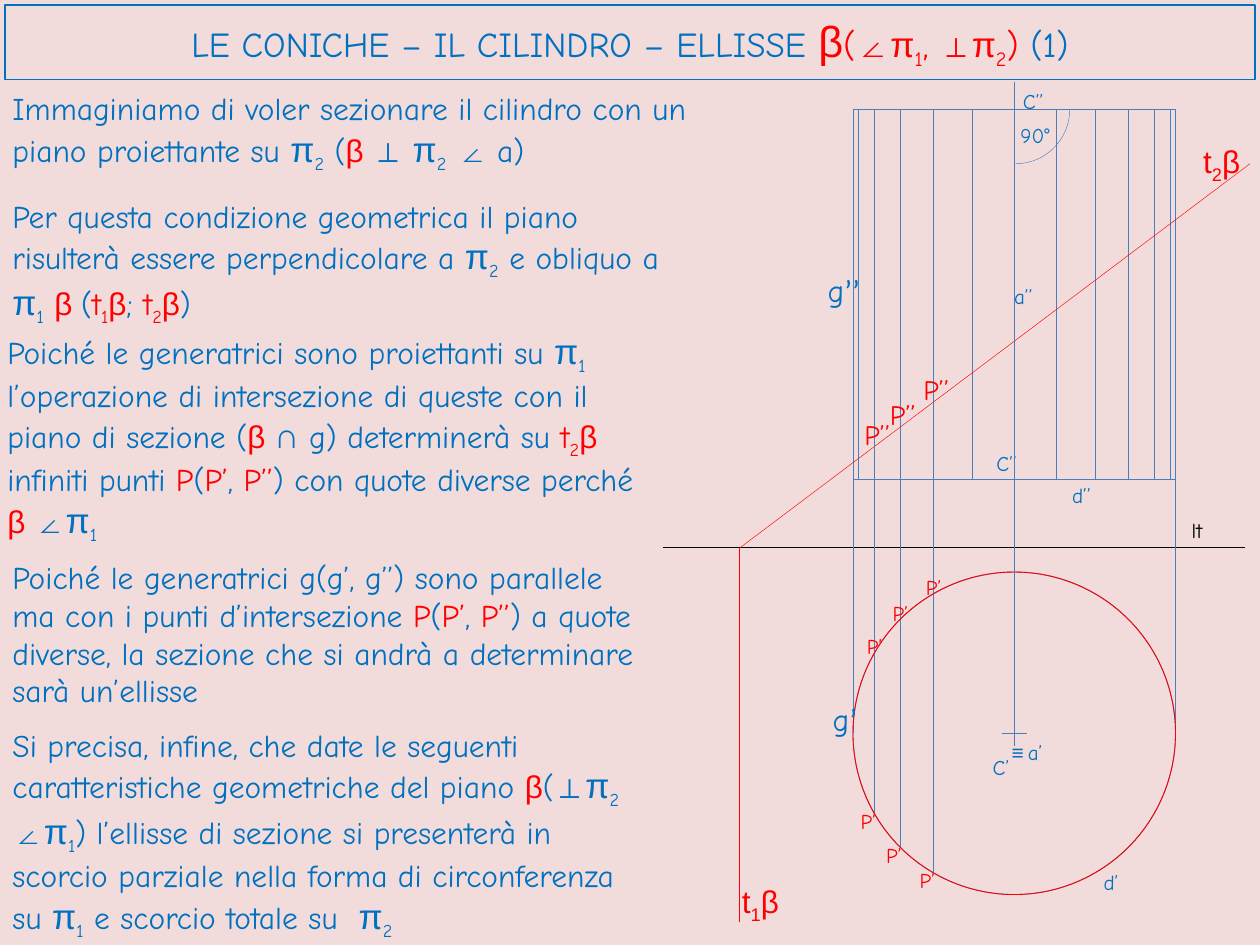
from itertools import groupby
from math import cos, radians, sin

from lxml.etree import SubElement
from pptx import Presentation
from pptx.dml.color import RGBColor
from pptx.enum.shapes import MSO_CONNECTOR, MSO_SHAPE
from pptx.enum.text import MSO_ANCHOR, MSO_AUTO_SIZE, PP_ALIGN
from pptx.oxml import parse_xml
from pptx.oxml.ns import nsdecls, qn
from pptx.util import Inches, Pt

PINK = RGBColor(0xF2, 0xDC, 0xDB)
BLUE = RGBColor(0x00, 0x70, 0xC0)
STEEL = RGBColor(0x4B, 0x7E, 0xBC)
RED = RGBColor(0xFF, 0x00, 0x00)
BLACK = RGBColor(0x00, 0x00, 0x00)

TEXT_FONT = "Comic Neue"
SYMBOL_FONTS = dict.fromkeys("πβ⊥∠∩≡", "Arial")
TRACE_FONTS = dict.fromkeys("t12β", "Arial")
PRIME_FONTS = {"’": "Calibri"}
BODY_SIZES = {"π": 20, "∩": 20}
TITLE_SIZES = {"β": 24.8, "⊥": 18}

TITLE = "LE CONICHE – IL CILINDRO – ELLISSE [β(∠π_1, ⊥π_2)] (1)"
EXPLANATIONS = [
    (0, 0, 5.79, 0.74, MSO_ANCHOR.TOP,
     "Immaginiamo di voler sezionare il cilindro con un piano proiettante su "
     "π_2 ([β] ⊥ π_2 ∠ a)"),
    (0, 0.87, 5.47, 1.1, MSO_ANCHOR.MIDDLE,
     "Per questa condizione geometrica il piano risulterà essere perpendicolare "
     "a π_2 e obliquo a π_1 [β ](t_1β[]; [t_2β])".replace("(t_1β[]", "([t_1β]")),
    (-0.04, 1.95, 5.24, 1.72, MSO_ANCHOR.MIDDLE,
     "Poiché le generatrici sono proiettanti su π_1 l’operazione di intersezione "
     "di queste con il piano di sezione ([β ]∩ g) determinerà su [t_2β] infiniti "
     "punti [P]([P’], [P’’]) con quote diverse perché [β ]∠π_1"),
    (0, 3.72, 5.28, 1.31, MSO_ANCHOR.TOP,
     "Poiché le generatrici g(g’, g’’) sono parallele ma con i punti "
     "d’intersezione [P]([P’], [P’’]) a quote diverse, la sezione che si andrà "
     "a determinare sarà un’ellisse"),
    (0, 5.05, 5.28, 1.72, MSO_ANCHOR.TOP,
     "Si precisa, infine, che date le seguenti caratteristiche geometriche del "
     "piano [β](⊥π_2 ∠π_1) l’ellisse di sezione si presenterà in scorcio parziale "
     "nella forma di circonferenza su π_1 e scorcio totale su  π_2"),
]
EXPLANATIONS[1] = EXPLANATIONS[1][:5] + (
    "Per questa condizione geometrica il piano risulterà essere perpendicolare "
    "a π_2 e obliquo a π_1 [β ]([t_1β]; [t_2β])",)

SECTION_ANGLES = (30, 45, 60)


def styled_characters(text, fonts):
    red = subscript = False
    symbol = ""
    for character in text:
        if character in "[]":
            red = character == "["
        elif character == "_":
            subscript = True
        else:
            if character != " ":
                symbol = character if character in fonts else ""
            yield character, (red, subscript, symbol)
            subscript = False


def write_text(paragraph, text, size, color=BLUE, fonts=SYMBOL_FONTS,
               sizes=BODY_SIZES, outlined=False):
    characters = styled_characters(text, fonts)
    for (red, subscript, symbol), group in groupby(characters, lambda item: item[1]):
        run = paragraph.add_run()
        run.text = "".join(character for character, style in group)
        run.font.name = fonts.get(symbol, TEXT_FONT)
        run.font.size = Pt(sizes.get(symbol, size))
        run.font.bold = symbol in ("⊥", "∩")
        run.font.color.rgb = RED if red else color
        properties = run._r.get_or_add_rPr()
        if subscript:
            properties.set("baseline", "-25000")
        if outlined and not red:
            properties.insert(0, parse_xml(
                f'<a:ln {nsdecls("a")} w="9525"><a:solidFill>'
                f'<a:srgbClr val="{color}"/></a:solidFill></a:ln>'))


def add_text(slide, left, top, width, height, text, size=12,
             anchor=MSO_ANCHOR.TOP, **style):
    shape = slide.shapes.add_textbox(
        Inches(left), Inches(top), Inches(width), Inches(height))
    text_frame = shape.text_frame
    text_frame.word_wrap = True
    text_frame.auto_size = MSO_AUTO_SIZE.SHAPE_TO_FIT_TEXT
    text_frame.vertical_anchor = anchor
    write_text(text_frame.paragraphs[0], text, size, **style)


def add_line(slide, x1, y1, x2, y2, color=STEEL):
    line = slide.shapes.add_connector(
        MSO_CONNECTOR.STRAIGHT, Inches(x1), Inches(y1), Inches(x2), Inches(y2))
    line.line.color.rgb = color
    line.line.width = Pt(0.25)
    SubElement(line._element.spPr, qn("a:effectLst"))


def add_outline(slide, kind, center_x, center_y, radius, color, width):
    shape = slide.shapes.add_shape(
        kind, Inches(center_x - radius), Inches(center_y - radius),
        Inches(2 * radius), Inches(2 * radius))
    shape.shadow.inherit = False
    shape.fill.background()
    shape.line.color.rgb = color
    shape.line.width = Pt(width)
    return shape


def add_title(slide, left, top, width, height):
    title = slide.shapes.title
    title.left, title.top = Inches(left), Inches(top)
    title.width, title.height = Inches(width), Inches(height)
    title.line.color.rgb = BLUE
    title.line.width = Pt(0.75)
    title.text_frame.auto_size = MSO_AUTO_SIZE.NONE
    title.text_frame.vertical_anchor = MSO_ANCHOR.MIDDLE
    paragraph = title.text_frame.paragraphs[0]
    paragraph.alignment = PP_ALIGN.CENTER
    write_text(paragraph, TITLE, 20, sizes=TITLE_SIZES, outlined=True)


def add_explanations(slide, left, top):
    for x, y, width, height, anchor, text in EXPLANATIONS:
        add_text(slide, left + x, top + y, width, height, text, 18, anchor)


def add_elevation(slide, left, top, width, height):
    radius = width / 2
    axis, bottom = left + radius, top + height
    for y in (top, bottom):
        add_line(slide, left, y, left + width, y)
    for angle in range(0, 181, 15):
        if angle != 90:
            x = axis - radius * cos(radians(angle))
            add_line(slide, x, bottom, x, top)
    arc = add_outline(slide, MSO_SHAPE.ARC, axis + 0.01, top, 0.43, STEEL, 0.25)
    arc.adjustments[0], arc.adjustments[1] = 0, 54
    for x, y, text in [(-0.03, -0.22, "C’’"), (-0.05, 0.05, "90°"),
                       (-0.1, 1.33, "a’’"), (-0.24, 2.66, "C’’"),
                       (0.36, 2.91, "d’’")]:
        add_text(slide, axis + x, top + y, 0.52, 0.3, text)
    add_text(slide, left - 0.3, top + 1.23, 0.47, 0.42, "g’’", 18, fonts=PRIME_FONTS)


def add_plan(slide, left, top, diameter):
    radius = diameter / 2
    x, y = left + radius, top + radius
    add_outline(slide, MSO_SHAPE.OVAL, x, y, radius, STEEL, 0.5)
    add_outline(slide, MSO_SHAPE.OVAL, x, y, radius, RED, 0.5)
    add_line(slide, x, y - 0.1, x, y + 0.1)
    add_line(slide, x - 0.1, y, x + 0.1, y)
    for dx, dy, text in [(-0.27, 0.12, "C’"), (-0.12, 0, "≡"),
                         (0.01, 0, "a’"), (0.61, 1.03, "d’")]:
        add_text(slide, x + dx, y + dy, 0.38, 0.3, text)
    add_text(slide, left - 0.26, y - 0.31, 0.44, 0.4, "g’", 18, fonts=PRIME_FONTS)


def add_plane_traces(slide, left, top, width, height, ground):
    add_line(slide, left, ground, left, top + height, RED)
    add_line(slide, left, ground, left + width, top, RED)
    add_text(slide, left + 3.58, top - 0.22, 0.55, 0.4, "[t_2β]", 18, fonts=TRACE_FONTS)
    add_text(slide, left - 0.08, top + 5.65, 0.55, 0.4, "[t_1β]", 18, fonts=TRACE_FONTS)


def add_projection_lines(slide, axis, center, radius, top, ground, trace_left, slope):
    add_line(slide, axis, top, axis, center)
    for x in (axis - radius, axis + radius):
        add_line(slide, x, center, x, ground - 0.55)
    for angle in SECTION_ANGLES:
        x = axis - radius * cos(radians(angle))
        rise = radius * sin(radians(angle))
        trace_y = ground - slope * (x - trace_left)
        add_line(slide, x, center + rise, x, trace_y)
        add_text(slide, x - 0.18, trace_y - 0.28, 0.43, 0.37, "[P’’]", 16)
        add_text(slide, x - 0.16, center - rise - 0.2, 0.39, 0.3, "[P’]")
        add_text(slide, x - 0.21, center + rise - 0.09, 0.39, 0.3, "[P’]")


def add_ground_line(slide, left, top, width):
    add_line(slide, left, top, left + width, top, BLACK)
    add_text(slide, left + 4.1, top - 0.28, 0.38, 0.3, "lt", color=BLACK)


def main():
    presentation = Presentation()
    presentation.slide_width, presentation.slide_height = Inches(10), Inches(7.5)
    slide = presentation.slides.add_slide(presentation.slide_layouts[0])
    subtitle = slide.placeholders[1]._element
    subtitle.getparent().remove(subtitle)
    slide.background.fill.solid()
    slide.background.fill.fore_color.rgb = PINK

    add_title(slide, 0.04, 0.04, 9.92, 0.59)
    add_ground_line(slide, 5.26, 4.34, 4.62)
    add_elevation(slide, 6.77, 0.87, 2.56, 2.93)
    add_plane_traces(slide, 5.87, 1.3, 4.05, 6.02, 4.35)
    add_explanations(slide, 0, 0.66)
    add_projection_lines(slide, 8.05, 5.82, 1.28, 0.65, 4.35, 5.87, 3.05 / 4.05)
    add_plan(slide, 6.77, 4.54, 2.56)
    presentation.save("out.pptx")


if __name__ == "__main__":
    main()
